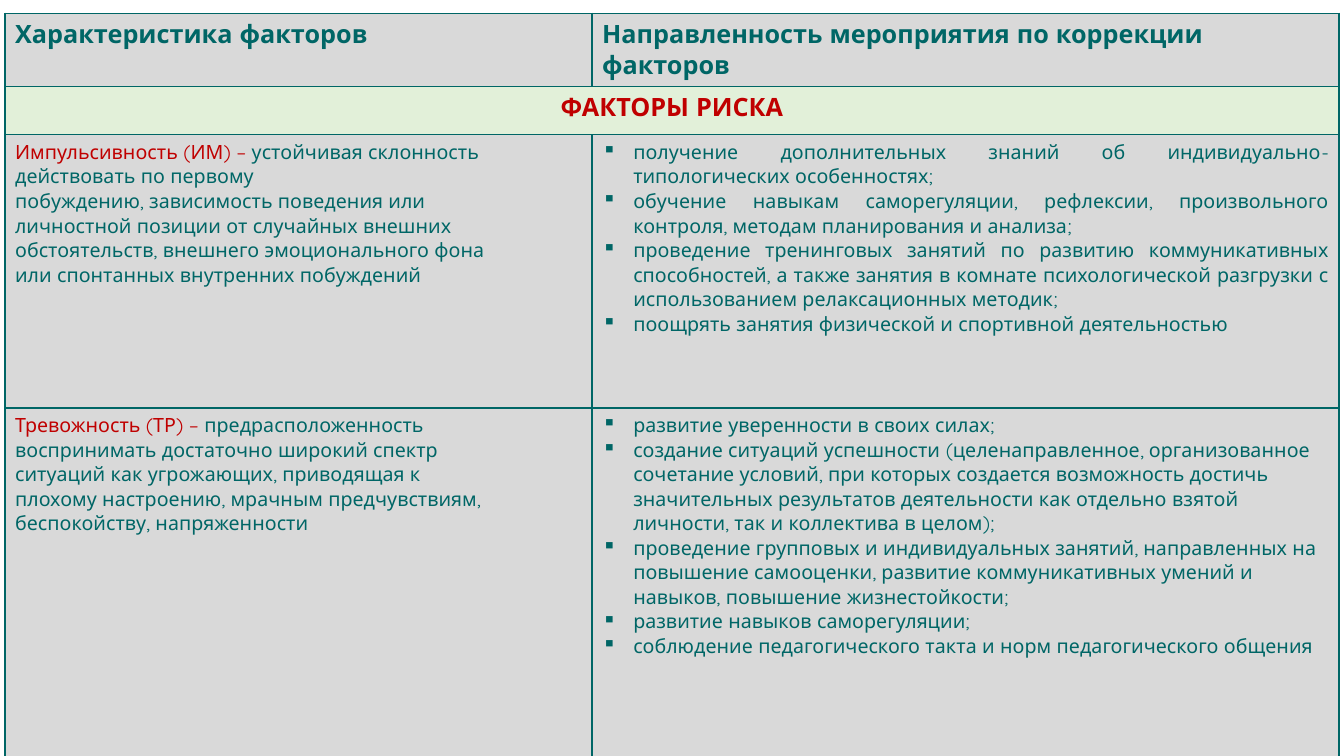
from lxml import etree
from pptx import Presentation, util as u
from pptx.dml.color import RGBColor
from pptx.enum import text
from pptx.oxml.ns import qn

SLIDE_WIDTH, SLIDE_HEIGHT = u.Inches(13.33), u.Inches(7.5)
FONT = "Quicksand"
COLORS = {"teal": "006666", "red": "C00000", "grey": "D9D9D9", "green": "E2F0D9"}
COLUMN_WEIGHTS = (44, 56)
ROW_WEIGHTS = (57, 48, 271, 361)
INDENT = u.Inches(0.31)
JUSTIFY, LEFT = text.PP_ALIGN.JUSTIFY, text.PP_ALIGN.LEFT

HEADERS = ("Характеристика факторов", "Направленность мероприятия по коррекции факторов")
BAND = "ФАКТОРЫ РИСКА"
# Each factor: name, description lines, measures, alignment of the measures
FACTORS = [
    (
        "Импульсивность (ИМ) – ",
        [
            "устойчивая склонность",
            "действовать по первому",
            "побуждению, зависимость поведения или",
            "личностной позиции от случайных внешних",
            "обстоятельств, внешнего эмоционального фона",
            "или спонтанных внутренних побуждений",
        ],
        [
            "получение дополнительных знаний об индивидуально-типологических особенностях;",
            "обучение навыкам саморегуляции, рефлексии, произвольного контроля, "
            "методам планирования и анализа;",
            "проведение тренинговых занятий по развитию коммуникативных способностей, "
            "а также занятия в комнате психологической разгрузки с использованием "
            "релаксационных методик;",
            "поощрять занятия физической и спортивной деятельностью",
        ],
        JUSTIFY,
    ),
    (
        "Тревожность (ТР) – ",
        [
            "предрасположенность",
            "воспринимать достаточно широкий спектр",
            "ситуаций как угрожающих, приводящая к",
            "плохому настроению, мрачным предчувствиям,",
            "беспокойству, напряженности",
        ],
        [
            "развитие уверенности в своих силах;",
            "создание ситуаций успешности (целенаправленное, организованное сочетание "
            "условий, при которых создается возможность достичь значительных результатов "
            "деятельности как отдельно взятой личности, так и коллектива в целом);",
            "проведение групповых и индивидуальных занятий, направленных на повышение "
            "самооценки, развитие коммуникативных умений и навыков, повышение "
            "жизнестойкости;",
            "развитие навыков саморегуляции;",
            "соблюдение педагогического такта и норм педагогического общения",
        ],
        LEFT,
    ),
]


def rgb(name):
    return RGBColor.from_string(COLORS[name])


def style_cell(cell, fill):
    """Draw the cell's borders and fill; borders come first in the cell's XML."""
    properties = cell._tc.get_or_add_tcPr()
    for side in ("a:lnL", "a:lnR", "a:lnT", "a:lnB"):
        line = etree.SubElement(properties, qn(side), w=str(u.Pt(1)))
        solid = etree.SubElement(line, qn("a:solidFill"))
        etree.SubElement(solid, qn("a:srgbClr"), val=COLORS["teal"])
    cell.fill.solid()
    cell.fill.fore_color.rgb = rgb(fill)


def add_bullet(paragraph):
    properties = paragraph._p.get_or_add_pPr()
    properties.set("marL", str(INDENT))
    properties.set("indent", str(-INDENT))
    etree.SubElement(properties, qn("a:buChar"), char="▪")


def write_cell(cell, lines, size=14, bold=False, color="teal", align=LEFT, bulleted=False, lead=""):
    """Write one paragraph per line, the first one opening with a red lead."""
    for index, line in enumerate(lines):
        paragraph = cell.text_frame.paragraphs[0] if index == 0 else cell.text_frame.add_paragraph()
        paragraph.alignment = align
        if bulleted:
            add_bullet(paragraph)
        if lead and index == 0:
            lead_run = paragraph.add_run()
            lead_run.text = lead
            lead_run.font.color.rgb = rgb("red")
        paragraph.add_run().text = line
        font = paragraph.font
        font.name, font.size, font.bold = FONT, u.Pt(size), bold
        font.color.rgb = rgb(color)


def add_factor_table(slide, left, top, width, height):
    table = slide.shapes.add_table(len(ROW_WEIGHTS), len(COLUMN_WEIGHTS), left, top, width, height).table
    table.first_row = table.horz_banding = False
    for column, weight in zip(table.columns, COLUMN_WEIGHTS):
        column.width = int(width * weight / sum(COLUMN_WEIGHTS))
    for row, weight in zip(table.rows, ROW_WEIGHTS):
        row.height = int(height * weight / sum(ROW_WEIGHTS))
    for index, row in enumerate(table.rows):
        for cell in row.cells:
            style_cell(cell, "green" if index == 1 else "grey")

    for column, header in enumerate(HEADERS):
        write_cell(table.cell(0, column), [header], size=18, bold=True)
    band = table.cell(1, 0)
    band.merge(table.cell(1, 1))
    write_cell(band, [BAND], size=18, bold=True, color="red", align=text.PP_ALIGN.CENTER)
    for row, (name, description, measures, align) in enumerate(FACTORS, start=2):
        write_cell(table.cell(row, 0), description, align=JUSTIFY, lead=name)
        write_cell(table.cell(row, 1), measures, align=align, bulleted=True)


def main():
    presentation = Presentation()
    presentation.slide_width, presentation.slide_height = SLIDE_WIDTH, SLIDE_HEIGHT
    slide = presentation.slides.add_slide(presentation.slide_layouts[6])
    margin, top = u.Inches(0.05), u.Inches(0.13)
    add_factor_table(slide, margin, top, SLIDE_WIDTH - 2 * margin, SLIDE_HEIGHT - top)
    presentation.save("out.pptx")


if __name__ == "__main__":
    main()
